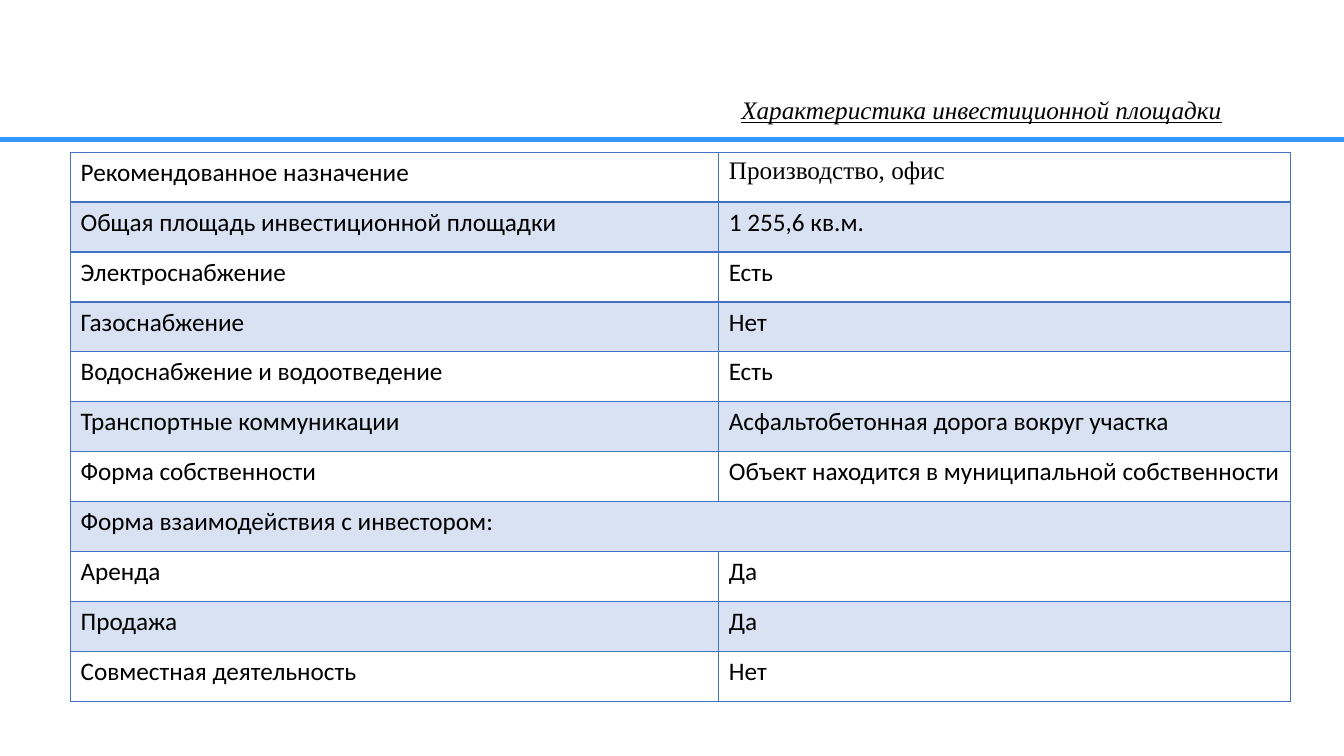
from lxml import etree
from pptx import Presentation
from pptx.dml.color import RGBColor
from pptx.enum.shapes import MSO_CONNECTOR
from pptx.enum.text import MSO_ANCHOR, PP_ALIGN
from pptx.oxml.ns import qn
from pptx.util import Pt

EMU_PER_PX = 9144
BLANK_LAYOUT = 6
STRAIGHT = MSO_CONNECTOR.STRAIGHT
MIDDLE = MSO_ANCHOR.MIDDLE
CENTER = PP_ALIGN.CENTER
COLORS = {"text": "000000", "rule": "3399FF", "grid": "4472C4"}
BAND_ALPHA = 20000
BODY_FONT = "Calibri"
SERIF_FONT = "Times New Roman"
COLUMN_WIDTHS = [643, 567]
ROWS = [
    ("Рекомендованное назначение", "Производство, офис"),
    ("Общая площадь инвестиционной площадки", "1 255,6 кв.м."),
    ("Электроснабжение", "Есть"),
    ("Газоснабжение", "Нет"),
    ("Водоснабжение и водоотведение", "Есть"),
    ("Транспортные коммуникации", "Асфальтобетонная дорога вокруг участка"),
    ("Форма собственности", "Объект находится в муниципальной собственности"),
    ("Форма взаимодействия с инвестором:",),
    ("Аренда", "Да"),
    ("Продажа", "Да"),
    ("Совместная деятельность", "Нет"),
]


def px(value):
    return value * EMU_PER_PX


def color(name):
    return RGBColor.from_string(COLORS[name])


def add_span(para, text, font_name):
    span = para.add_run()
    span.text = text
    span.font.name = font_name
    span.font.size = Pt(18)
    span.font.color.rgb = color("text")
    return span


def add_title(page, text):
    box = page.shapes.add_textbox(px(667), px(97), px(613), px(27))
    frame = box.text_frame
    frame.word_wrap = True
    frame.vertical_anchor = MIDDLE
    para = frame.paragraphs[0]
    para.alignment = CENTER
    para.line_spacing = 0.9
    span = add_span(para, text, SERIF_FONT)
    span.font.italic = True
    span.font.underline = True


def add_rule(page, top, width):
    rule = page.shapes.add_connector(STRAIGHT, 0, px(top), px(width), px(top))
    rule.line.color.rgb = color("rule")
    rule.line.width = Pt(3.5)
    etree.SubElement(rule._element.spPr, qn("a:effectLst"))


def set_borders(cell, top_width, bottom_width):
    properties = cell._tc.get_or_add_tcPr()
    widths = {"lnL": 1, "lnR": 1, "lnT": top_width, "lnB": bottom_width}
    for side, width in widths.items():
        line = etree.SubElement(properties, qn(f"a:{side}"), w=str(Pt(width)))
        fill = etree.SubElement(line, qn("a:solidFill"))
        etree.SubElement(fill, qn("a:srgbClr"), val=COLORS["grid"])


def set_fill(cell, banded):
    if not banded:
        cell.fill.background()
        return
    cell.fill.solid()
    cell.fill.fore_color.rgb = color("grid")
    tint = cell._tc.tcPr.find(f"{qn('a:solidFill')}/{qn('a:srgbClr')}")
    etree.SubElement(tint, qn("a:alpha"), val=str(BAND_ALPHA))


def add_site_table(page):
    frame = page.shapes.add_table(
        len(ROWS), len(COLUMN_WIDTHS), px(70), px(151), px(sum(COLUMN_WIDTHS)), px(545)
    )
    table = frame.table
    table.first_row = False
    table.horz_banding = False
    for column, width in zip(table.columns, COLUMN_WIDTHS):
        column.width = px(width)
    for row, texts in enumerate(ROWS):
        for column in range(len(COLUMN_WIDTHS)):
            cell = table.cell(row, column)
            set_borders(cell, 2 if row == 1 else 1, 2 if row == 0 else 1)
            set_fill(cell, row % 2 == 1)
        if len(texts) == 1:
            table.cell(row, 0).merge(table.cell(row, 1))
        for column, text in enumerate(texts):
            font_name = SERIF_FONT if (row, column) == (0, 1) else BODY_FONT
            para = table.cell(row, column).text_frame.paragraphs[0]
            add_span(para, text, font_name)


def main():
    deck = Presentation()
    deck.slide_width = px(1333)
    deck.slide_height = px(750)
    page = deck.slides.add_slide(deck.slide_layouts[BLANK_LAYOUT])
    add_rule(page, 138, 1333)
    add_title(page, "Характеристика инвестиционной площадки")
    add_site_table(page)
    deck.save("out.pptx")


if __name__ == "__main__":
    main()
